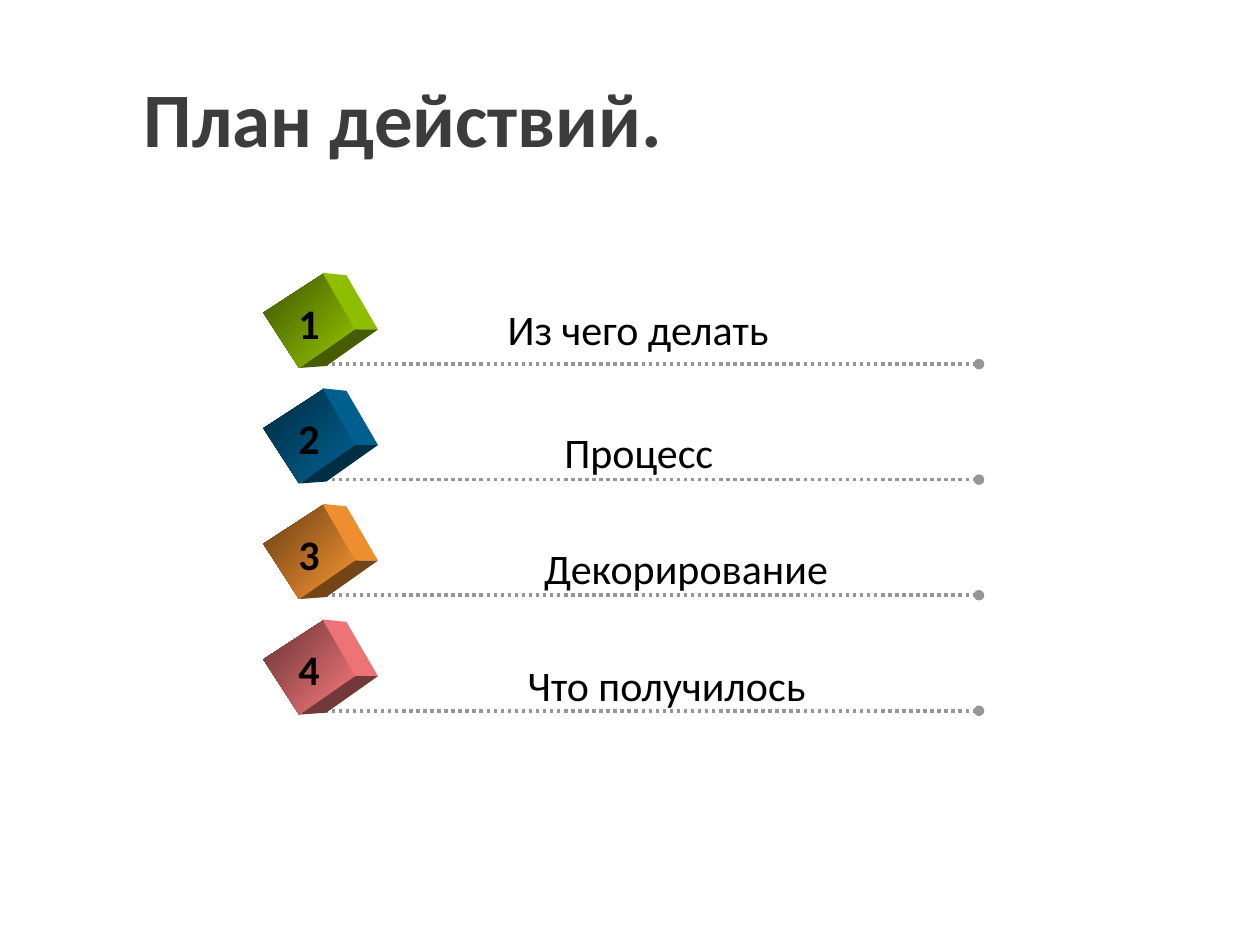
from lxml import etree
from pptx import Presentation
from pptx.dml.color import RGBColor
from pptx.enum.dml import MSO_LINE
from pptx.enum.shapes import MSO_CONNECTOR, MSO_SHAPE
from pptx.enum.text import MSO_ANCHOR, MSO_AUTO_SIZE, PP_ALIGN
from pptx.oxml.ns import qn
from pptx.util import Inches, Pt

STRAIGHT = MSO_CONNECTOR.STRAIGHT
RECTANGLE = MSO_SHAPE.RECTANGLE
DOTTED = MSO_LINE.ROUND_DOT
MIDDLE = MSO_ANCHOR.MIDDLE
LEFT = PP_ALIGN.LEFT
FIT = MSO_AUTO_SIZE.SHAPE_TO_FIT_TEXT
TITLE_ONLY = 5
COLUMNS, ROWS = 10, 7.5
COLORS = {
    "title": "3C3C3C", "text": "000000", "rule": "969696",
    "green": "99CC00", "blue": "006699", "orange": "FF9933", "pink": "FF7C80",
}
STEPS = [
    ("Из чего делать", "green", 3.93, 2.38, -0.53),
    ("Процесс", "blue", 4.38, 1.39, -0.47),
    ("Декорирование", "orange", 4.22, 2.48, -0.47),
    ("Что получилось", "pink", 4.09, 2.43, -0.46),
]
FIRST_RULE, STEP_PITCH = 2.89, 0.917
CUBE_SIDES = [
    ([(0.09, -0.38), (0.28, -0.36), (0.53, 0.07), (0.35, 0.07)], 0.93),
    ([(0.35, 0.07), (0.53, 0.07), (0.12, 0.36), (-0.09, 0.375)], 0.45),
]


def shade(color, share):
    return RGBColor(*(round(part * share) for part in RGBColor.from_string(color)))


class PlanSlide:
    font = "Calibri"

    def __init__(self, deck):
        self.deck = deck
        self.slide = deck.slides.add_slide(deck.slide_layouts[TITLE_ONLY])

    def x(self, columns):
        return round(self.deck.slide_width * columns / COLUMNS)

    def y(self, rows):
        return round(self.deck.slide_height * rows / ROWS)

    def box(self, left, top, width, height):
        return self.x(left), self.y(top), self.x(width), self.y(height)

    def style(self, paragraph, size, color, bold):
        paragraph.alignment = LEFT
        for run in paragraph.runs:
            run.font.name = self.font
            run.font.size = Pt(size)
            run.font.bold = bold
            run.font.color.rgb = RGBColor.from_string(COLORS[color])

    def title(self, wording, *place):
        heading = self.slide.shapes.title
        heading.left, heading.top, heading.width, heading.height = self.box(*place)
        frame = heading.text_frame
        frame.text = wording
        frame.vertical_anchor = MIDDLE
        frame.paragraphs[0].line_spacing = 0.9
        self.style(frame.paragraphs[0], 44, "title", True)

    def text(self, group, wording, place, bold=False):
        frame = group.shapes.add_textbox(*self.box(*place)).text_frame
        frame.text = wording
        frame.word_wrap = False
        frame.auto_size = FIT
        self.style(frame.paragraphs[0], 24, "text", bold)

    def rule(self, group, start, end, row):
        rule = group.shapes.add_connector(
            STRAIGHT, self.x(start), self.y(row), self.x(end), self.y(row))
        rule.line.color.rgb = RGBColor.from_string(COLORS["rule"])
        rule.line.width = Pt(2)
        rule.line.dash_style = DOTTED
        properties = rule.line._get_or_add_ln()
        etree.SubElement(properties, qn("a:tailEnd"), type="oval")
        etree.SubElement(properties.getparent(), qn("a:effectLst"))

    def cube(self, group, column, row, color):
        face = group.shapes.add_shape(
            RECTANGLE, *self.box(column - 0.26, row - 0.285, 0.52, 0.57))
        face.rotation = 57
        face.shadow.inherit = False
        face.line.fill.background()
        face.fill.gradient()
        face.fill.gradient_angle = 15
        for stop, share in zip(face.fill.gradient_stops, (0.4, 1)):
            stop.color.rgb = shade(color, share)
        for corners, share in CUBE_SIDES:
            points = [(self.x(column + dx), self.y(row + dy)) for dx, dy in corners]
            outline = group.shapes.build_freeform(*points[0])
            outline.add_line_segments(points[1:])
            side = outline.convert_to_shape()
            side.shadow.inherit = False
            side.line.fill.background()
            side.fill.solid()
            side.fill.fore_color.rgb = shade(color, share)

    def step(self, number, wording, color, left, width, rise):
        row = FIRST_RULE + (number - 1) * STEP_PITCH
        group = self.slide.shapes.add_group_shape()
        self.rule(group, 2.52, 7.77, row)
        self.cube(group, 2.47, row - 0.345, COLORS[color])
        self.text(group, wording, (left, row + rise, width, 0.51))
        self.text(group, str(number), (2.27, row - 0.58, 0.37, 0.51), True)


def main():
    deck = Presentation()
    deck.slide_width, deck.slide_height = Inches(COLUMNS), Inches(ROWS)
    plan = PlanSlide(deck)
    plan.title("План действий.", 1.04, 0.4, 8.67, 1.14)
    for number, step in enumerate(STEPS, 1):
        plan.step(number, *step)
    deck.save("out.pptx")


if __name__ == "__main__":
    main()
